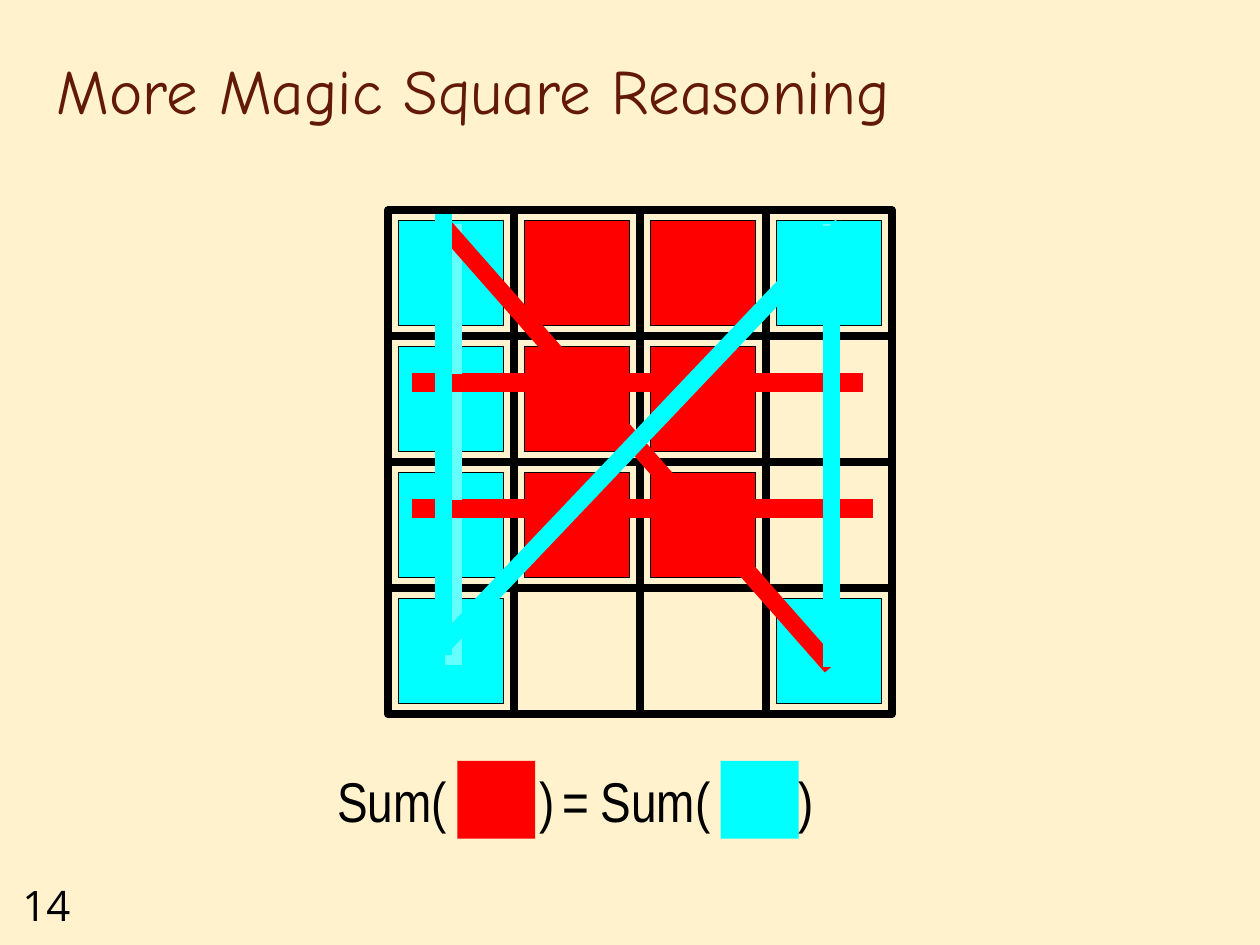
from lxml import etree
from pptx import Presentation
from pptx.dml.color import RGBColor
from pptx.enum.shapes import MSO_CONNECTOR, MSO_SHAPE
from pptx.oxml.ns import qn
from pptx.util import Cm, Pt

RECTANGLE = MSO_SHAPE.RECTANGLE
STRAIGHT = MSO_CONNECTOR.STRAIGHT
CREAM = RGBColor(0xFF, 0xF2, 0xCD)
BROWN = RGBColor(0x63, 0x19, 0x08)
BLACK = RGBColor(0x00, 0x00, 0x00)
RED = RGBColor(0xFF, 0x00, 0x00)
CYAN = RGBColor(0x00, 0xFF, 0xFF)
PALE_CYAN = RGBColor(0x66, 0xFF, 0xFF)

deck = Presentation()
deck.slide_width = Cm(25.4)
deck.slide_height = Cm(19.05)
page = deck.slides.add_slide(deck.slide_layouts[6])
page.background.fill.solid()
page.background.fill.fore_color.rgb = CREAM


def add_text(text, left, top, width, height, font_name, size, color):
    box = page.shapes.add_textbox(Cm(left), Cm(top), Cm(width), Cm(height))
    box.text_frame.word_wrap = True
    para = box.text_frame.paragraphs[0]
    para.text = text
    para.font.name = font_name
    para.font.size = Pt(size)
    para.font.color.rgb = color


def add_square(left, top, side, fill_color, line_width):
    square = page.shapes.add_shape(RECTANGLE, Cm(left), Cm(top), Cm(side), Cm(side))
    square.shadow.inherit = False
    if fill_color is None:
        square.fill.background()
    else:
        square.fill.solid()
        square.fill.fore_color.rgb = fill_color
    if line_width:
        square.line.color.rgb = BLACK
        square.line.width = Pt(line_width)
    else:
        square.line.fill.background()


add_text("14", 0.2, 17.6, 1.9, 1.27, "Open Sans", 24, BLACK)
add_text("More Magic Square Reasoning", 0.89, 0.91, 23.06, 3.07, "Comic Neue", 36, BROWN)

GRID_LEFT, GRID_TOP, CELL = 7.82, 4.24, 2.54
TILE = 2.12
MARGIN = (CELL - TILE) / 2
TILE_COLORS = {"r": RED, "b": CYAN}
TILE_ROWS = ["brrb", "brr.", "brr.", "b..b"]

for row in range(4):
    for column in range(4):
        add_square(GRID_LEFT + column * CELL, GRID_TOP + row * CELL, CELL, None, 4.5)

for row, marks in enumerate(TILE_ROWS):
    for column, mark in enumerate(marks):
        if mark in TILE_COLORS:
            left = GRID_LEFT + column * CELL + MARGIN
            top = GRID_TOP + row * CELL + MARGIN
            add_square(left, top, TILE, TILE_COLORS[mark], 0.75)

sum_lines = [
    (8.31, 7.7, 17.4, 7.7, RED),
    (8.31, 10.24, 17.6, 10.24, RED),
    (9.14, 13.41, 9.14, 4.52, PALE_CYAN),
    (16.76, 13.41, 16.76, 4.52, PALE_CYAN),
    (16.76, 13.44, 8.94, 4.55, RED),
    (8.31, 7.72, 17.4, 7.72, RED),
    (8.31, 10.26, 17.6, 10.26, RED),
    (16.76, 13.44, 16.76, 4.55, CYAN),
    (8.94, 13, 16.97, 4.55, CYAN),
    (8.94, 13.21, 8.94, 4.32, CYAN),
]
for start_x, start_y, end_x, end_y, color in sum_lines:
    sum_line = page.shapes.add_connector(STRAIGHT, Cm(start_x), Cm(start_y), Cm(end_x), Cm(end_y))
    sum_line.line.color.rgb = color
    sum_line.line.width = Pt(10)
    etree.SubElement(sum_line._element.spPr, qn("a:effectLst"))

add_square(9.22, 15.34, 1.57, RED, 0)
add_square(14.53, 15.34, 1.57, CYAN, 0)

equation = [
    ("Sum(", 6.55, 3.3),
    (")", 10.62, 1),
    ("=", 11.1, 1.57),
    ("Sum(", 11.86, 3.3),
    (")", 15.84, 1),
]
for text, left, width in equation:
    add_text(text, left, 15.32, width, 1.6, "Arial Narrow", 32, BLACK)

deck.save("out.pptx")
